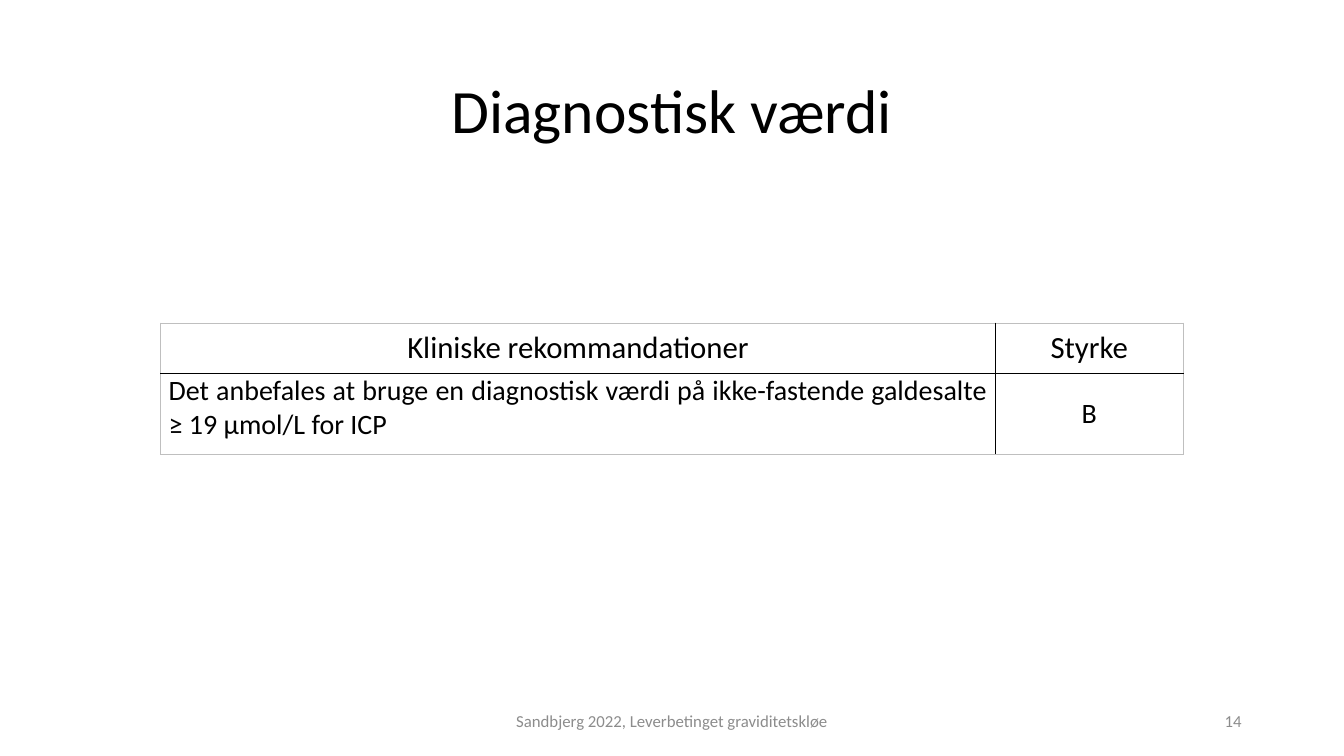
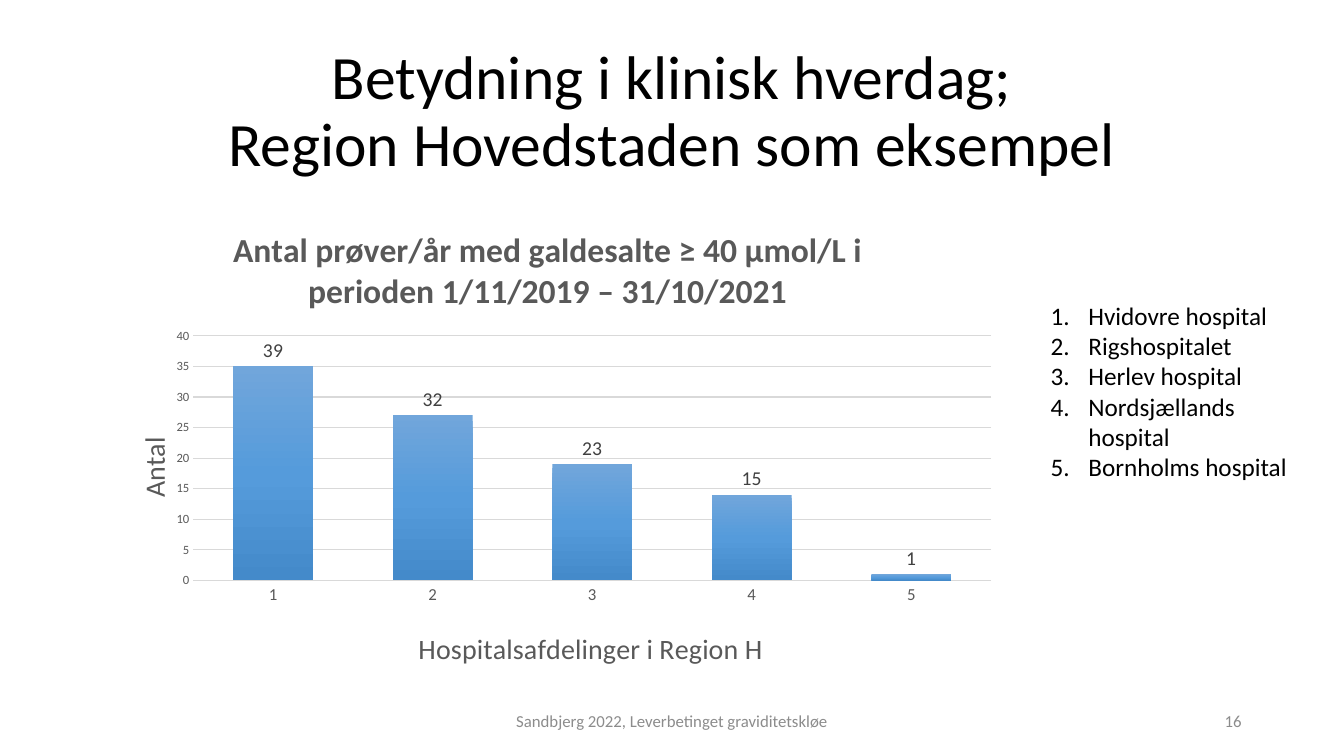
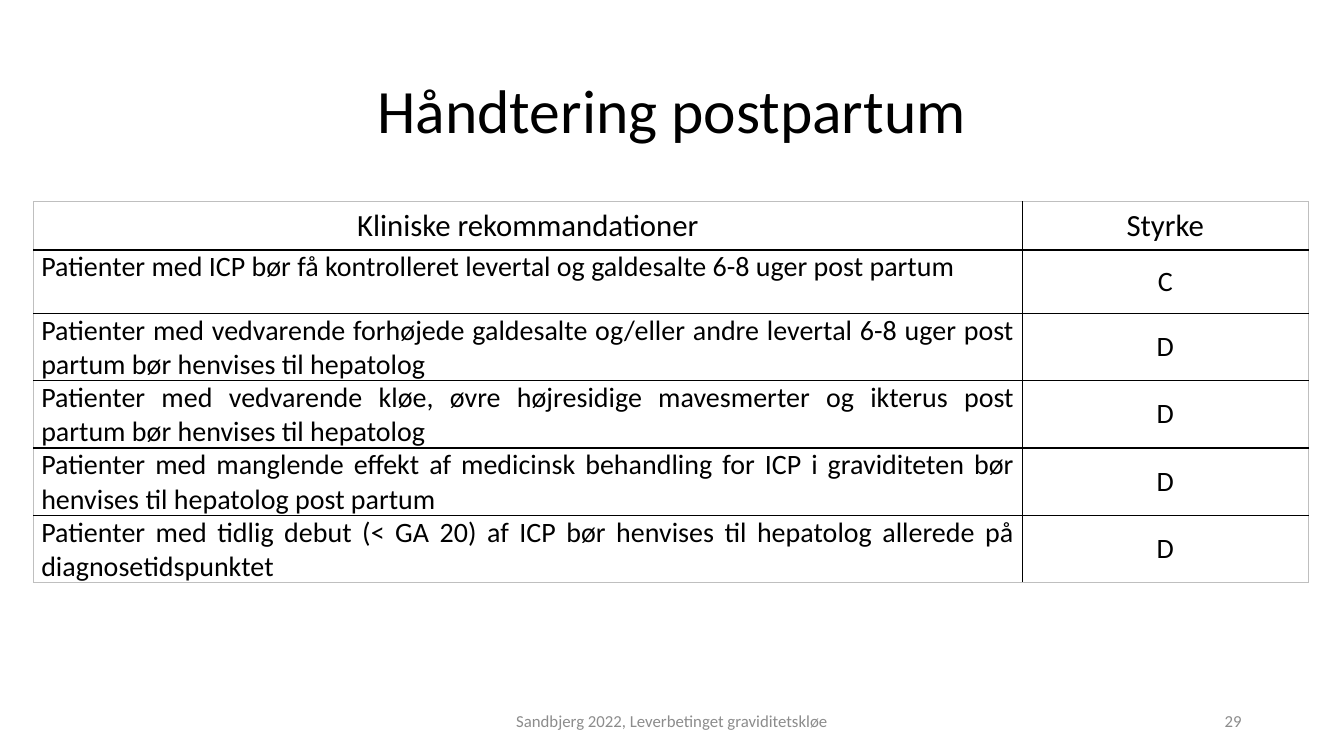
from dataclasses import dataclass

from pptx import Presentation
from pptx.chart.data import CategoryChartData
from pptx.dml.color import RGBColor
from pptx.enum.chart import XL_CHART_TYPE, XL_LABEL_POSITION, XL_TICK_MARK
from pptx.enum.text import MSO_ANCHOR, PP_ALIGN
from pptx.oxml import parse_xml
from pptx.oxml.ns import nsdecls, qn
from pptx.util import Cm, Pt

LEFT, CENTER, RIGHT, JUSTIFY = (PP_ALIGN.LEFT, PP_ALIGN.CENTER,
                                PP_ALIGN.RIGHT, PP_ALIGN.JUSTIFY)
TOP, MIDDLE = MSO_ANCHOR.TOP, MSO_ANCHOR.MIDDLE
COLUMNS = XL_CHART_TYPE.COLUMN_CLUSTERED
OUTSIDE = XL_LABEL_POSITION.OUTSIDE_END
NO_TICK = XL_TICK_MARK.NONE


@dataclass(frozen=True)
class Theme:
    font: str = "Calibri"
    ink: str = "000000"
    footer: str = "8C8C8C"
    chart_text: str = "595959"
    label: str = "404040"
    grid: str = "D9D9D9"
    table_edge: str = "BFBFBF"
    bar: tuple = ((0, "71A6DB"), (50, "559BDB"), (100, "448ACA"))
    title_size: int = 44
    chart_title_size: int = 24
    head_size: int = 22
    body_size: int = 20
    list_size: int = 18
    label_size: int = 14
    small_size: int = 12
    tick_size: int = 9


T = Theme()
FOOTER = "Sandbjerg 2022, Leverbetinget graviditetskløe"
TABLE_HEAD = ("Kliniske rekommandationer", "Styrke")


# Text
def set_font(font, size, color=T.ink, bold=False):
    font.name, font.size, font.bold = T.font, Pt(size), bold
    font.color.rgb = RGBColor.from_string(color)


def write(tf, *lines, size=T.body_size, color=T.ink, bold=False, align=LEFT,
          spacing=None, numbered=False):
    """Fill a text frame with one paragraph per line."""
    for i, line in enumerate(lines):
        p = tf.paragraphs[0] if i == 0 else tf.add_paragraph()
        p.text, p.alignment = line, align
        if spacing:
            p.line_spacing = spacing
        for r in p.runs:
            set_font(r.font, size, color, bold)
        if numbered:
            pPr = p._p.get_or_add_pPr()
            pPr.set("marL", str(Cm(0.95)))
            pPr.set("indent", str(-Cm(0.95)))
            pPr.append(parse_xml(
                f'<a:buAutoNum {nsdecls("a")} type="arabicPeriod"/>'))


def text_box(s, x, y, w, h, *lines, anchor=MIDDLE, **style):
    tf = s.shapes.add_textbox(Cm(x), Cm(y), Cm(w), Cm(h)).text_frame
    tf.word_wrap, tf.vertical_anchor = True, anchor
    write(tf, *lines, **style)


# Slide with title, footer and number
def new_slide(prs, title, number):
    s = prs.slides.add_slide(prs.slide_layouts[6])
    text_box(s, 2.33, 1.01, 29.21, 3.68, title, size=T.title_size,
             align=CENTER, spacing=0.9)
    small = {"size": T.small_size, "color": T.footer}
    text_box(s, 11.22, 17.66, 11.43, 1.01, FOOTER, align=CENTER, **small)
    text_box(s, 23.92, 17.66, 7.62, 1.01, str(number), align=RIGHT, **small)
    return s


# Table
def set_borders(cell, outer):
    """Draw the sides named in outer in grey and the others in black."""
    tcPr = cell._tc.get_or_add_tcPr()
    for i, side in enumerate("LRTB"):
        color, width = (T.table_edge, 0.5) if side in outer else (T.ink, 1)
        tcPr.insert(i, parse_xml(
            f'<a:ln{side} {nsdecls("a")} w="{Pt(width)}"><a:solidFill>'
            f'<a:srgbClr val="{color}"/></a:solidFill></a:ln{side}>'))


def recommendation_table(s, x, y, col_widths, head_height, row_height, rows):
    rows = [TABLE_HEAD, *rows]
    heights = [head_height] + [row_height] * (len(rows) - 1)
    table = s.shapes.add_table(len(rows), len(col_widths), Cm(x), Cm(y),
                               Cm(sum(col_widths)), Cm(sum(heights))).table
    table.first_row = table.horz_banding = False
    for column, width in zip(table.columns, col_widths):
        column.width = Cm(width)
    for i, row in enumerate(rows):
        table.rows[i].height = Cm(heights[i])
        for j, text in enumerate(row):
            cell = table.cell(i, j)
            prose = i > 0 and j == 0
            cell.margin_left = cell.margin_right = Cm(0.2)
            cell.margin_top = cell.margin_bottom = 0
            cell.vertical_anchor = TOP if prose else MIDDLE
            write(cell.text_frame, text, align=JUSTIFY if prose else CENTER,
                  size=T.body_size if i else T.head_size)
            cell.fill.background()
            set_borders(cell, ("L" if j == 0 else "R")
                        + ("T" if i == 0 else "")
                        + ("B" if i == len(rows) - 1 else ""))


# Chart
def place(element, index, target="", **fractions):
    """Give a chart part a fixed place, in fractions of the chart."""
    for old in element.findall(qn("c:layout")):
        element.remove(old)
    modes = "".join(f'<c:{k}Mode val="edge"/>' for k in "xy")
    values = "".join(f'<c:{k} val="{v}"/>' for k, v in fractions.items())
    element.insert(index, parse_xml(
        f'<c:layout {nsdecls("c")}><c:manualLayout>{target}{modes}{values}'
        '</c:manualLayout></c:layout>'))


def chart_heading(title, *lines, x, y, size=T.body_size, bold=False):
    write(title.text_frame, *lines, size=size, color=T.chart_text, bold=bold,
          align=CENTER)
    place(title._element, 1, x=x, y=y)


def style_axis(axis, size):
    axis.major_tick_mark = axis.minor_tick_mark = NO_TICK
    set_font(axis.tick_labels.font, size, T.chart_text)


def set_line(line, width):
    line.width = Pt(width)
    line.color.rgb = RGBColor.from_string(T.grid)


def fill_gradient(series):
    stops = "".join(f'<a:gs pos="{pos * 1000}"><a:srgbClr val="{color}"/></a:gs>'
                    for pos, color in T.bar)
    series._element.get_or_add_spPr().insert(0, parse_xml(
        f'<a:gradFill {nsdecls("a")} rotWithShape="1"><a:gsLst>{stops}</a:gsLst>'
        '<a:lin ang="5400000" scaled="0"/></a:gradFill>'))


def sample_chart(s, values, labels):
    data = CategoryChartData()
    data.categories = [str(i + 1) for i in range(len(values))]
    data.add_series("Series 1", values)
    chart = s.shapes.add_chart(COLUMNS, Cm(2.33), Cm(5.08), Cm(23.11),
                               Cm(12.09), data).chart
    chart.has_legend = False
    set_font(chart.font, 10)

    # Axes
    cat, val = chart.category_axis, chart.value_axis
    style_axis(cat, T.small_size)
    style_axis(val, T.tick_size)
    set_line(cat.format.line, 1)
    set_line(val.major_gridlines.format.line, 0.75)
    val.format.line.fill.background()
    val.minimum_scale, val.maximum_scale, val.major_unit = 0, 40, 5

    # Titles and plot area
    chart_heading(chart.chart_title,
                  "Antal prøver/år med galdesalte ≥ 40 µmol/L i",
                  "perioden 1/11/2019 – 31/10/2021",
                  x=0.15, y=0.05, size=T.chart_title_size, bold=True)
    chart_heading(cat.axis_title, "Hospitalsafdelinger i Region H",
                  x=0.35, y=0.88)
    chart_heading(val.axis_title, "Antal", x=0.04, y=0.48)
    place(chart._chartSpace.chart.plotArea, 0,
          '<c:layoutTarget val="inner"/>', x=0.11, y=0.28, w=0.87, h=0.51)

    # Columns and their labels
    plot = chart.plots[0]
    plot.gap_width, plot.overlap, plot.vary_by_categories = 100, -24, False
    series = plot.series[0]
    fill_gradient(series)
    series.data_labels.show_value = True
    series.data_labels.position = OUTSIDE
    set_font(series.data_labels.font, T.label_size, T.label)
    for i, text in enumerate(labels):
        label = series.points[i].data_label
        write(label.text_frame, text, size=T.label_size, color=T.label,
              align=CENTER)
        label.position = OUTSIDE


def main():
    prs = Presentation()
    prs.slide_width, prs.slide_height = Cm(33.87), Cm(19.05)

    # Diagnostic threshold
    s = new_slide(prs, "Diagnostisk værdi", 14)
    recommendation_table(s, 4.05, 8.14, (21.03, 4.74), 1.27, 2.03, [
        ("Det anbefales at bruge en diagnostisk værdi på ikke-fastende "
         "galdesalte ≥ 19 µmol/L for ICP", "B"),
    ])

    # Samples per hospital
    s = new_slide(prs, "Betydning i klinisk hverdag;\n"
                       "Region Hovedstaden som eksempel", 16)
    sample_chart(s, (35, 27, 19, 14, 1), ("39", "32", "23", "15"))
    text_box(s, 26.23, 7.44, 6.89, 5.64,
             "Hvidovre hospital", "Rigshospitalet", "Herlev hospital",
             "Nordsjællands hospital", "Bornholms hospital",
             size=T.list_size, anchor=TOP, numbered=True)

    # Follow-up after birth
    s = new_slide(prs, "Håndtering postpartum", 29)
    recommendation_table(s, 0.84, 5.08, (24.92, 7.21), 1.22, 1.6, [
        ("Patienter med ICP bør få kontrolleret levertal og galdesalte "
         "6-8 uger post partum", "C"),
        ("Patienter med vedvarende forhøjede galdesalte og/eller andre "
         "levertal 6-8 uger post partum bør henvises til hepatolog", "D"),
        ("Patienter med vedvarende kløe, øvre højresidige mavesmerter og "
         "ikterus post partum bør henvises til hepatolog", "D"),
        ("Patienter med manglende effekt af medicinsk behandling for ICP i "
         "graviditeten bør henvises til hepatolog post partum", "D"),
        ("Patienter med tidlig debut (< GA 20) af ICP bør henvises til "
         "hepatolog allerede på diagnosetidspunktet", "D"),
    ])

    prs.save("out.pptx")


if __name__ == "__main__":
    main()
